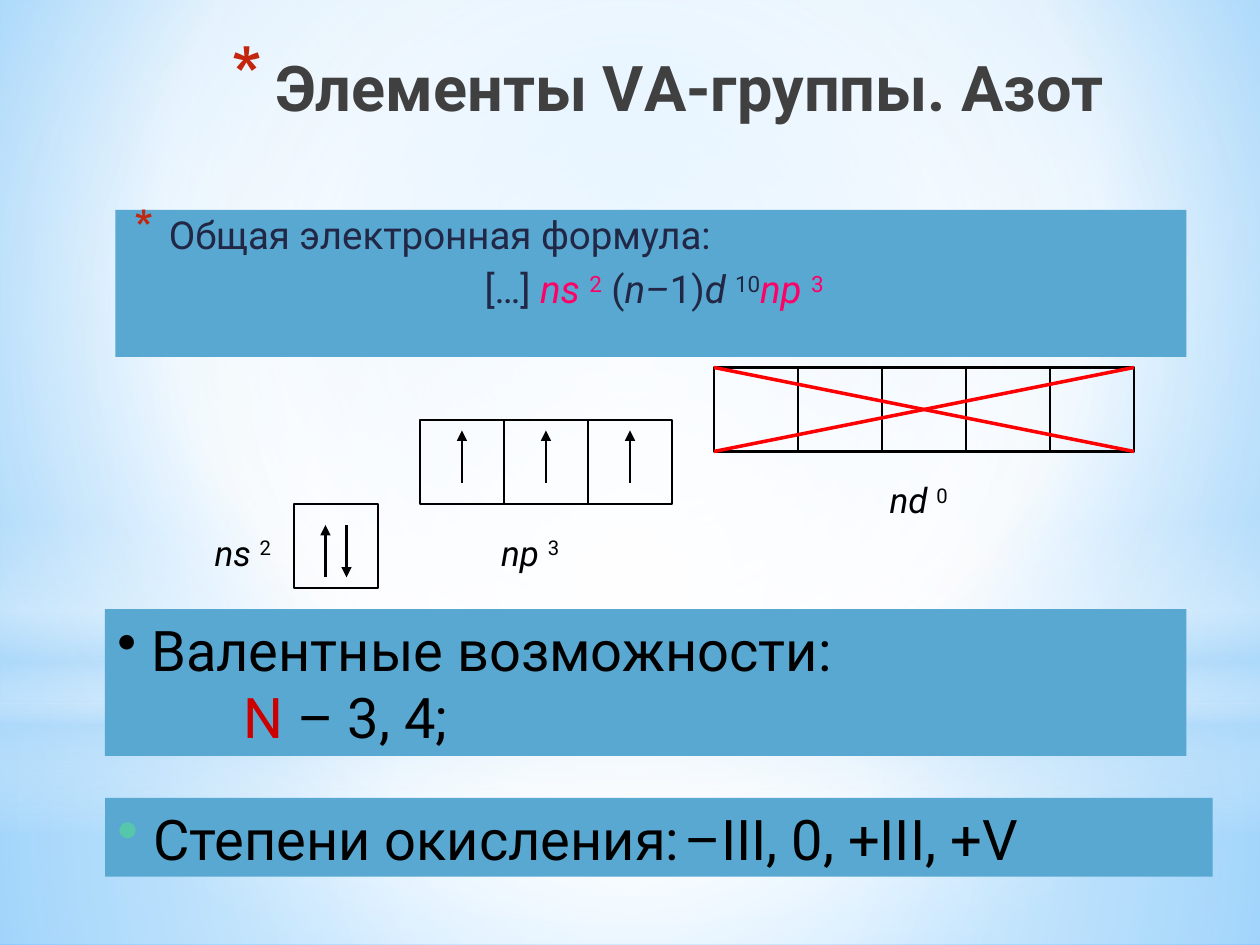
from dataclasses import dataclass
from typing import Optional

from lxml.etree import SubElement
from pptx import Presentation
from pptx.dml.color import RGBColor
from pptx.enum.shapes import MSO_CONNECTOR as Connector, MSO_SHAPE as Preset
from pptx.enum.text import MSO_ANCHOR as Anchor, MSO_AUTO_SIZE as AutoSize, PP_ALIGN as Align
from pptx.oxml.ns import qn
from pptx.util import Pt

FONT = "Roboto"
BLACK, NAVY, PINK, RED = "000000", "212745", "FF0066", "C3260C"
PANEL = "59A8D1"
CELL = 48  # side of an orbital cell


@dataclass
class Run:
    text: str
    color: str = BLACK
    italic: bool = False
    superscript: bool = False


@dataclass
class Bullet:
    char: str
    color: str = BLACK
    percent: int = 100


@dataclass
class Backdrop:
    preset: Preset
    top: float
    height: float
    stops: list  # (position %, colour, opacity %)
    focus: Optional[tuple] = None  # left, top, right, bottom in %; None is a vertical blend


@dataclass
class Orbital:
    left: float
    top: float
    cells: int
    arrows: list  # (x, from y, to y)
    letters: str
    electrons: str
    label_box: tuple
    label_align: Align


BACKGROUND_STOPS = [(0, "9ED5FF", 100), (60, "FFFFFF", 100), (100, "5BB9FF", 100)]
CENTRE = (50, 50, 50, 50)
BACKDROPS = [
    Backdrop(Preset.RECTANGLE, 402, 138,
             [(0, "FFFFFF", 91), (37, "FFFFFF", 76), (100, "B4DCFA", 79)], CENTRE),
    Backdrop(Preset.RECTANGLE, 0, 402,
             [(0, "FFFFFF", 89), (48, "FFFFFF", 62), (100, "B4DCFA", 79)], CENTRE),
    Backdrop(Preset.RECTANGLE, 297, 180,
             [(0, "FFFFFF", 0), (29, "FFFFFF", 30), (45, "B4DCFA", 40),
              (55, "FFFFFF", 26), (65, "B4DCFA", 60), (100, "FFFFFF", 0)]),
    Backdrop(Preset.OVAL, 126, 402, [(0, "FFFFFF", 100), (56, "FFFFFF", 0)], CENTRE),
]
ORBITALS = [
    Orbital(168, 288, 1, [(186, 330, 300), (198, 300, 330)],
            "ns ", "2", (102, 300, 60, 31), Align.RIGHT),
    Orbital(240, 240, 3, [(264 + CELL * i, 276, 246) for i in range(3)],
            "np ", "3", (264, 300, 78, 31), Align.CENTER),
    Orbital(408, 210, 5, [], "nd ", "0", (486, 270, 78, 31), Align.CENTER),
]


def rgb(color: str) -> RGBColor:
    return RGBColor.from_string(color)


def set_gradient(fill, owner, stops: list, focus: Optional[tuple]) -> None:
    """Swap a solid fill for a gradient with per-stop opacity."""
    fill.solid()
    solid = owner.find(".//" + qn("a:solidFill"))
    gradient = SubElement(owner, qn("a:gradFill"), rotWithShape="1")
    solid.getparent().replace(solid, gradient)
    stop_list = SubElement(gradient, qn("a:gsLst"))
    for position, color, opacity in stops:
        stop = SubElement(stop_list, qn("a:gs"), pos=str(position * 1000))
        tint = SubElement(stop, qn("a:srgbClr"), val=color)
        if opacity < 100:
            SubElement(tint, qn("a:alpha"), val=str(opacity * 1000))
    if focus is None:
        SubElement(gradient, qn("a:lin"), ang="5400000", scaled="0")
    else:
        path = SubElement(gradient, qn("a:path"), path="circle")
        sides = {side: str(value * 1000) for side, value in zip("ltrb", focus)}
        SubElement(path, qn("a:fillToRect"), **sides)


def add_shape(shapes, preset: Preset, box: tuple, fill: Optional[str] = None):
    shape = shapes.add_shape(preset, *map(Pt, box))
    shape.shadow.inherit = False
    shape.line.fill.background()
    if fill:
        shape.fill.solid()
        shape.fill.fore_color.rgb = rgb(fill)
    else:
        shape.fill.background()
    return shape


def add_line(shapes, start: tuple, end: tuple, color: str, width: float, arrow: bool = False) -> None:
    line = shapes.add_connector(Connector.STRAIGHT, *map(Pt, start + end))
    line.line.color.rgb = rgb(color)
    line.line.width = Pt(width)
    properties = line.element.spPr
    if arrow:
        SubElement(properties.find(qn("a:ln")), qn("a:tailEnd"), type="triangle")
    SubElement(properties, qn("a:effectLst"))


def prepare_frame(shape):
    frame = shape.text_frame
    settings = {"word_wrap": True, "auto_size": AutoSize.NONE, "vertical_anchor": Anchor.TOP}
    for name, value in settings.items():
        setattr(frame, name, value)
    return frame


def write_paragraph(paragraph, runs: list, size: float, bold: bool = False,
                    bullet: Optional[Bullet] = None, indent: tuple = (0, 0), **formats) -> None:
    for name, value in {"alignment": Align.LEFT, **formats}.items():
        setattr(paragraph, name, value)
    properties = paragraph._p.get_or_add_pPr()
    properties.set("marL", str(Pt(indent[0])))
    properties.set("indent", str(Pt(indent[1])))
    if bullet:
        color = SubElement(properties, qn("a:buClr"))
        SubElement(color, qn("a:srgbClr"), val=bullet.color)
        SubElement(properties, qn("a:buSzPct"), val=str(bullet.percent * 1000))
        SubElement(properties, qn("a:buChar"), char=bullet.char)
    for item in runs:
        run = paragraph.add_run()
        run.text = item.text
        settings = {"name": FONT, "size": Pt(size), "bold": bold, "italic": item.italic}
        for name, value in settings.items():
            setattr(run.font, name, value)
        run.font.color.rgb = rgb(item.color)
        if item.superscript:
            run._r.get_or_add_rPr().set("baseline", "30000")


def add_orbital(slide, orbital: Orbital) -> None:
    shapes = slide.shapes.add_group_shape().shapes
    for i in range(orbital.cells):
        cell = add_shape(shapes, Preset.RECTANGLE,
                         (orbital.left + CELL * i, orbital.top, CELL, CELL))
        cell.line.color.rgb = rgb(BLACK)
        cell.line.width = Pt(1.5)
    for x, start, end in orbital.arrows:
        add_line(shapes, (x, start), (x, end), BLACK, 1.5, arrow=True)
    label = shapes.add_textbox(*map(Pt, orbital.label_box))
    write_paragraph(prepare_frame(label).paragraphs[0],
                    [Run(orbital.letters, italic=True), Run(orbital.electrons, superscript=True)],
                    20, alignment=orbital.label_align)


def main() -> None:
    presentation = Presentation()
    presentation.slide_width, presentation.slide_height = Pt(720), Pt(540)
    slide = presentation.slides.add_slide(presentation.slide_layouts[5])
    shapes = slide.shapes

    # Background and soft light
    set_gradient(slide.background.fill, slide.element, BACKGROUND_STOPS, (20, 10, 20, 60))
    for item in BACKDROPS:
        shape = add_shape(shapes, item.preset, (0, item.top, 720, item.height), "FFFFFF")
        set_gradient(shape.fill, shape.element.spPr, item.stops, item.focus)

    # Title, brought in front of the backdrop
    title = shapes.title
    title.element.getparent().append(title.element)
    for name, value in {"left": 70.5, "top": 24, "width": 622, "height": 70.5}.items():
        setattr(title, name, Pt(value))
    write_paragraph(prepare_frame(title).paragraphs[0], [Run("Элементы VА-группы. Азот", "404040")],
                    36, bold=True, bullet=Bullet("*", RED, 128), indent=(25.2, -25.2),
                    alignment=Align.CENTER)

    # General electron formula
    frame = prepare_frame(add_shape(shapes, Preset.RECTANGLE, (66, 120, 612, 84), PANEL))
    spacing = {"indent": (18, -14.4), "line_spacing": 0.9,
               "space_before": Pt(4.4), "space_after": Pt(3)}
    write_paragraph(frame.paragraphs[0], [Run(" Общая электронная формула:", NAVY)], 22,
                    bullet=Bullet("*", RED, 130), **spacing)
    formula = [Run("[…] ", NAVY), Run("ns ", PINK, True), Run("2", PINK, superscript=True),
               Run(" (", NAVY), Run("n–", NAVY, True), Run("1)", NAVY), Run("d ", NAVY, True),
               Run("10", NAVY, superscript=True), Run("np ", PINK, True),
               Run("3", PINK, superscript=True)]
    write_paragraph(frame.add_paragraph(), formula, 22, alignment=Align.CENTER, **spacing)

    # Oxidation states
    frame = prepare_frame(add_shape(shapes, Preset.RECTANGLE, (60, 456, 633, 45), PANEL))
    write_paragraph(frame.paragraphs[0], [Run(" Степени окисления:\t–III, 0, +III, +V")], 32,
                    bullet=Bullet("•", "56C7AA", 110))

    # Orbital diagrams
    for orbital in ORBITALS:
        add_orbital(slide, orbital)

    # Valence
    frame = prepare_frame(add_shape(shapes, Preset.RECTANGLE, (60, 348, 618, 84), PANEL))
    write_paragraph(frame.paragraphs[0], [Run(" Валентные возможности:")], 32, bullet=Bullet("•"))
    write_paragraph(frame.add_paragraph(), [Run("N ", "CC0000"), Run("– 3, 4;")], 32, indent=(72, 0))

    # Cross over the empty d cells
    for start, end in ((210, 258), (258, 210)):
        add_line(shapes, (408, start), (648, end), "FF0000", 2)

    presentation.save("out.pptx")


if __name__ == "__main__":
    main()
